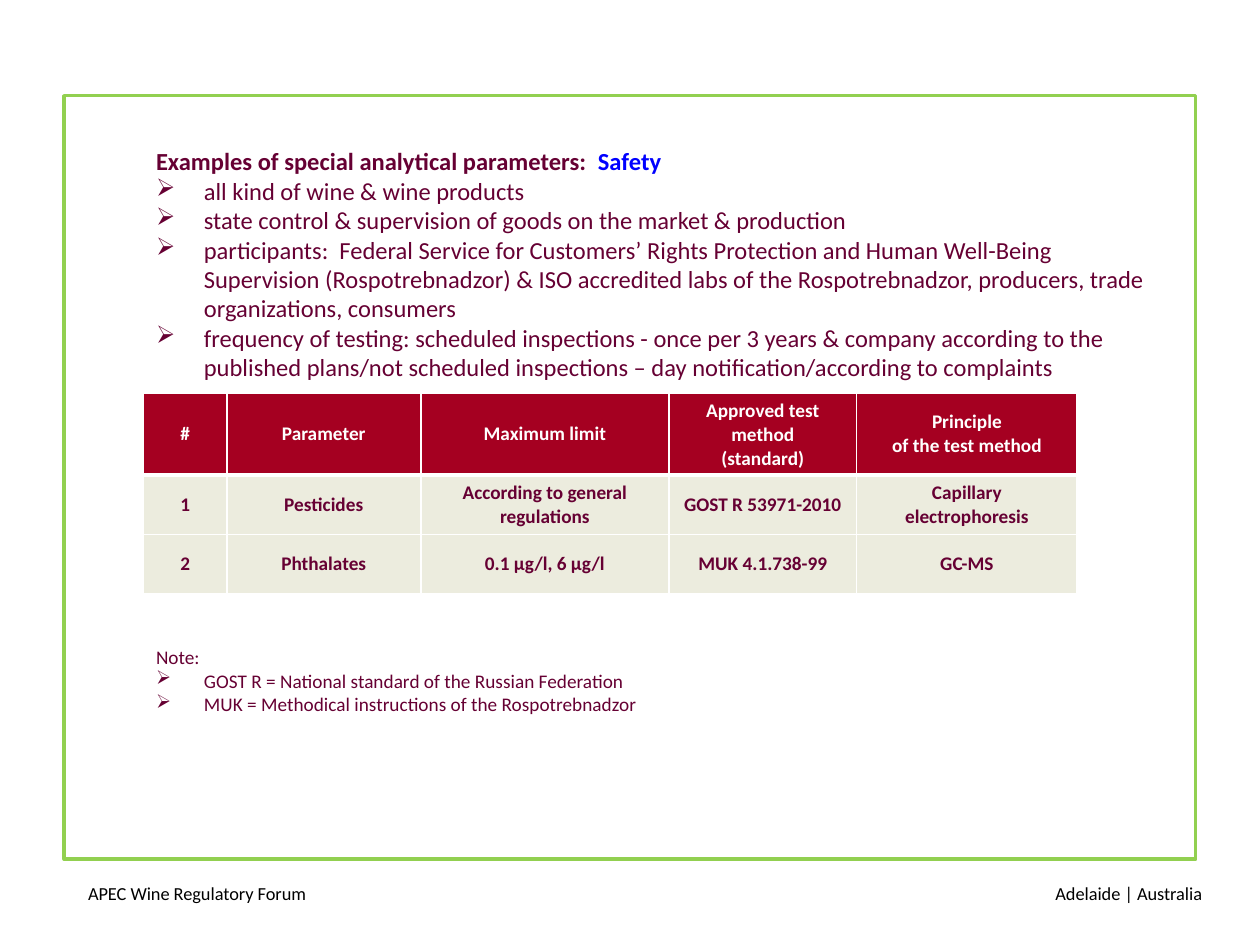
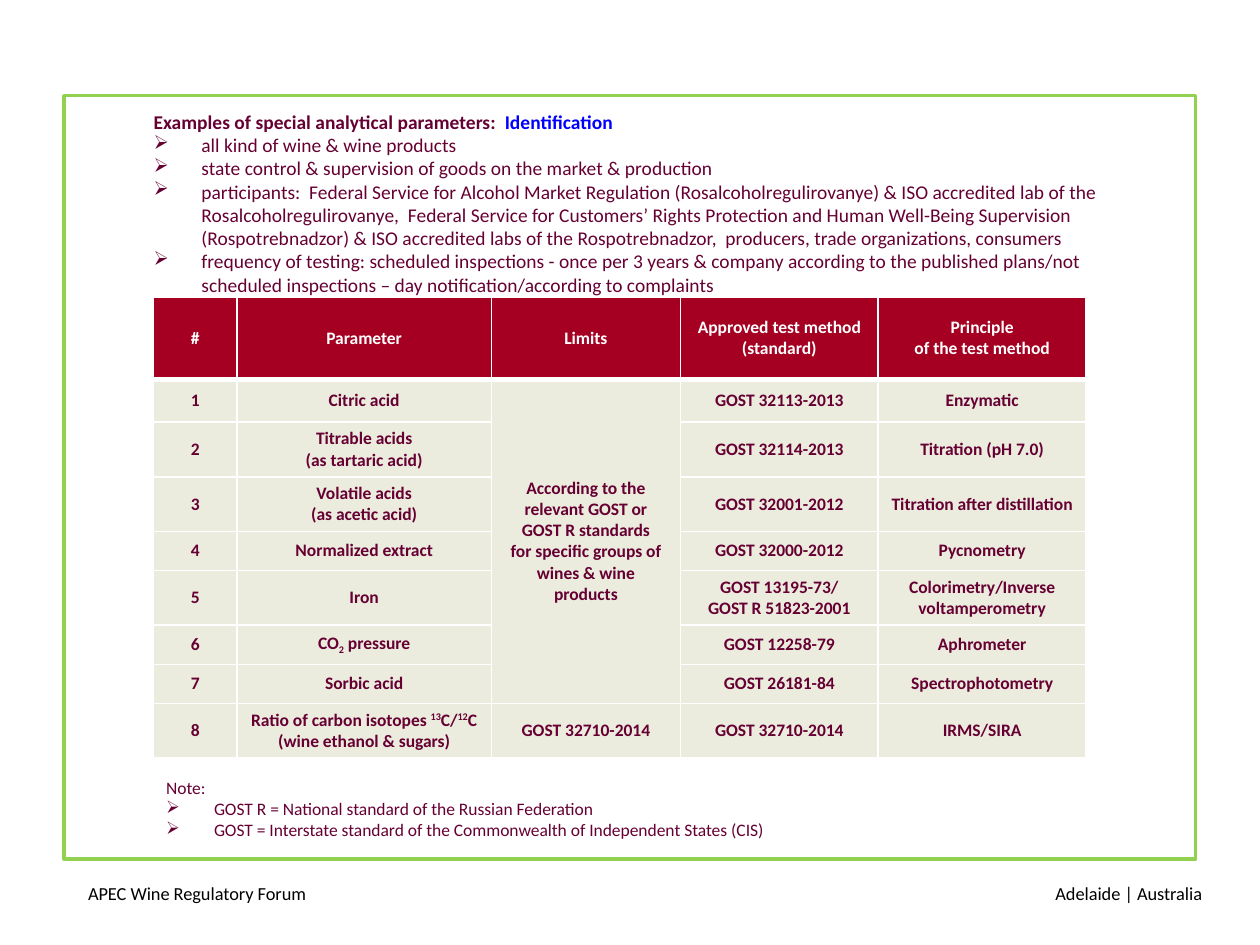
"""Build two slides on special analytical parameters of wine."""
from dataclasses import dataclass
from typing import NamedTuple

from lxml.etree import SubElement
from pptx import Presentation
from pptx.dml.color import RGBColor
from pptx.enum.shapes import MSO_SHAPE
from pptx.enum.text import MSO_ANCHOR, PP_ALIGN
from pptx.oxml import parse_xml
from pptx.oxml.ns import nsdecls, qn
from pptx.util import Inches, Pt

FONT = "Calibri"
BLACK, WHITE, WINE, BLUE = "000000", "FFFFFF", "660033", "0000FF"
RED, CREAM, GREEN = "A50021", "ECECDE", "92D050"
INDENT = 0.38


class Run(NamedTuple):
    """A piece of a line with its own colour, or a raised or lowered base."""
    text: str
    tone: str = ""
    base: int = 0


class Box(NamedTuple):
    """A place on the slide in inches."""
    left: float
    top: float
    width: float
    height: float


Text = str | list[Run]


@dataclass
class Grid:
    """A table with its place, column widths, row heights and rows."""
    left: float
    top: float
    cols: list[float]
    tall: list[float]
    size: float
    rows: list[list[Text | None]]
    span: tuple[int, int, int] | None = None


@dataclass
class Page:
    """The content of one slide."""
    topic: str
    body: Box
    size: float
    points: list[str]
    grid: Grid
    note: Box
    terms: list[str]


def hue(code: str) -> RGBColor:
    """Turn a hex string into a colour."""
    return RGBColor.from_string(code)


def put(frame, text: list[Text], size: float = 11, tone: str = WINE, bold: bool = False,
        align=PP_ALIGN.LEFT, anchor=MSO_ANCHOR.TOP, lead: bool = False) -> None:
    """Write lines into a text frame; with lead, bold the first and bullet the rest."""
    frame.word_wrap = True
    frame.vertical_anchor = anchor
    for i, line in enumerate(text):
        para = frame.paragraphs[0] if i == 0 else frame.add_paragraph()
        para.alignment = align
        if lead and i:
            props = para._p.get_or_add_pPr()
            props.set("marL", str(Inches(INDENT)))
            props.set("indent", str(-Inches(INDENT)))
            SubElement(props, qn("a:buChar")).set("char", "➢")
        for part in [Run(line)] if isinstance(line, str) else line:
            run = para.add_run()
            run.text = part.text
            font = run.font
            font.name, font.size = FONT, Pt(size)
            font.bold = bold and not (lead and i)
            font.color.rgb = hue(part.tone or tone)
            if part.base:
                font._element.set("baseline", str(part.base * 1000))


def label(slide, box: Box, text: list[Text], **form) -> None:
    """Add a text box."""
    put(slide.shapes.add_textbox(*map(Inches, box)).text_frame, text, **form)


def edge(cell, top: float, base: float) -> None:
    """Give a cell white borders, with the top and base widths in points."""
    props = cell._tc.get_or_add_tcPr()
    for i, (side, width) in enumerate(zip("LRTB", (1, 1, top, base))):
        props.insert(i, parse_xml(
            f'<a:ln{side} {nsdecls("a")} w="{Pt(width)}"><a:solidFill>'
            f'<a:srgbClr val="{WHITE}"/></a:solidFill></a:ln{side}>'))


def chart(slide, grid: Grid) -> None:
    """Add a table with a red head row."""
    place = Box(grid.left, grid.top, sum(grid.cols), sum(grid.tall))
    table = slide.shapes.add_table(
        len(grid.rows), len(grid.cols), *map(Inches, place)).table
    table.horz_banding = False
    for col, width in zip(table.columns, grid.cols):
        col.width = Inches(width)
    for r, (row, items) in enumerate(zip(table.rows, grid.rows)):
        row.height = Inches(grid.tall[r])
        for cell, item in zip(row.cells, items):
            cell.fill.solid()
            cell.fill.fore_color.rgb = hue(CREAM if r else RED)
            edge(cell, 3 if r == 1 else 1, 1 if r else 3)
            cell.vertical_anchor = MSO_ANCHOR.MIDDLE
            if item is not None:
                lines = item.split("\n") if isinstance(item, str) else [item]
                put(cell.text_frame, lines, size=grid.size, tone=WINE if r else WHITE,
                    bold=True, align=PP_ALIGN.CENTER, anchor=MSO_ANCHOR.MIDDLE)
    if grid.span:
        col, first, last = grid.span
        table.cell(first, col).merge(table.cell(last, col))


def base(slide) -> None:
    """Draw the green frame and both footers."""
    label(slide, Box(0.6, 6.95, 2.35, 0.4), ["APEC Wine Regulatory Forum"],
          size=10.5, tone=BLACK)
    frame = slide.shapes.add_shape(
        MSO_SHAPE.RECTANGLE, *map(Inches, Box(0.51, 0.76, 8.98, 6.06)))
    frame.shadow.inherit = False
    frame.fill.background()
    frame.line.color.rgb = hue(GREEN)
    frame.line.width = Pt(2)
    label(slide, Box(7.29, 6.95, 2.35, 0.4), ["Adelaide | Australia"],
          size=10.5, tone=BLACK, align=PP_ALIGN.RIGHT)


def draw(deck, page: Page) -> None:
    """Add one slide."""
    slide = deck.slides.add_slide(deck.slide_layouts[6])
    base(slide)
    chart(slide, page.grid)
    form = {"anchor": MSO_ANCHOR.MIDDLE, "lead": True}
    label(slide, page.note, ["Note:", RUSSIA, *page.terms], size=page.grid.size, **form)
    head = [Run("Examples of special analytical parameters:  "), Run(page.topic, BLUE)]
    label(slide, page.body, [head, *SCOPE, *page.points, PLAN],
          size=page.size, bold=True, **form)


SCOPE = ["all kind of wine & wine products",
         "state control & supervision of goods on the market & production"]
PLAN = ("frequency of testing: scheduled inspections - once per 3 years & company "
        "according to the published plans/not scheduled inspections – day "
        "notification/according to complaints")
RUSSIA = "GOST R = National standard of the Russian Federation"
RIGHTS = ("Federal Service for Customers’ Rights Protection and Human Well-Being "
          "Supervision (Rospotrebnadzor) & ISO accredited labs of the Rospotrebnadzor, ")


def heads(limit: str, method: str) -> list[Text | None]:
    """Return the head row of a table."""
    return ["#", "Parameter", limit, method, "Principle\nof the test method"]


METHOD = "Approved test method\n(standard)"
SAFETY = Page(
    "Safety", Box(1.14, 1.15, 8.27, 1.89), 14,
    [f"participants:  {RIGHTS}producers, trade organizations, consumers"],
    Grid(1.14, 3.12, [0.66, 1.54, 1.97, 1.49, 1.75], [0.65, 0.47, 0.47], 11, [
        heads("Maximum limit", METHOD),
        ["1", "Pesticides", "According to general regulations",
         "GOST R 53971-2010", "Capillary electrophoresis"],
        ["2", "Phthalates", "0.1 μg/l, 6 μg/l", "MUK 4.1.738-99", "GC-MS"],
    ]),
    Box(1.14, 4.93, 7.72, 0.94),
    ["MUK = Methodical instructions of the Rospotrebnadzor"])

IDENTITY = Page(
    "Identification", Box(1.12, 0.92, 8.21, 1.38), 11.1,
    ["participants:  Federal Service for Alcohol Market Regulation "
     "(Rosalcoholregulirovanye) & ISO accredited lab of the Rosalcoholregulirovanye,  "
     f"{RIGHTS} producers, trade organizations, consumers"],
    Grid(1.22, 2.36, [0.66, 2.02, 1.5, 1.57, 1.65], [0.65, 0.34] + [0.31] * 7, 10, [
        heads("Limits", METHOD),
        ["1", "Citric acid",
         "According to the relevant GOST or GOST R standards\n"
         "for specific groups of wines & wine products", "GOST 32113-2013", "Enzymatic"],
        ["2", "Titrable acids\n(as tartaric acid)", None,
         "GOST 32114-2013", "Titration (pH 7.0)"],
        ["3", "Volatile acids\n(as acetic acid)", None,
         "GOST 32001-2012", "Titration after distillation"],
        ["4", "Normalized extract", None, "GOST 32000-2012", "Pycnometry"],
        ["5", "Iron", None, "GOST 13195-73/\nGOST R 51823-2001",
         "Colorimetry/Inverse voltamperometry"],
        ["6", [Run("CO"), Run("2", base=-25), Run(" pressure")], None,
         "GOST 12258-79", "Aphrometer"],
        ["7", "Sorbic acid", None, "GOST 26181-84", "Spectrophotometry"],
        ["8", [Run("Ratio of carbon isotopes "), Run("13", base=30), Run("C/"),
               Run("12", base=30), Run("C (wine ethanol & sugars)")],
         "GOST 32710-2014", "GOST 32710-2014", "IRMS/SIRA"],
    ], (2, 1, 7)),
    Box(1.22, 5.95, 7.72, 0.94),
    ["GOST = Interstate standard of the Commonwealth of Independent States (CIS)"])


def main() -> None:
    """Build and save the deck."""
    deck = Presentation()
    deck.slide_width, deck.slide_height = Inches(10), Inches(7.5)
    for page in (SAFETY, IDENTITY):
        draw(deck, page)
    deck.save("out.pptx")


if __name__ == "__main__":
    main()
